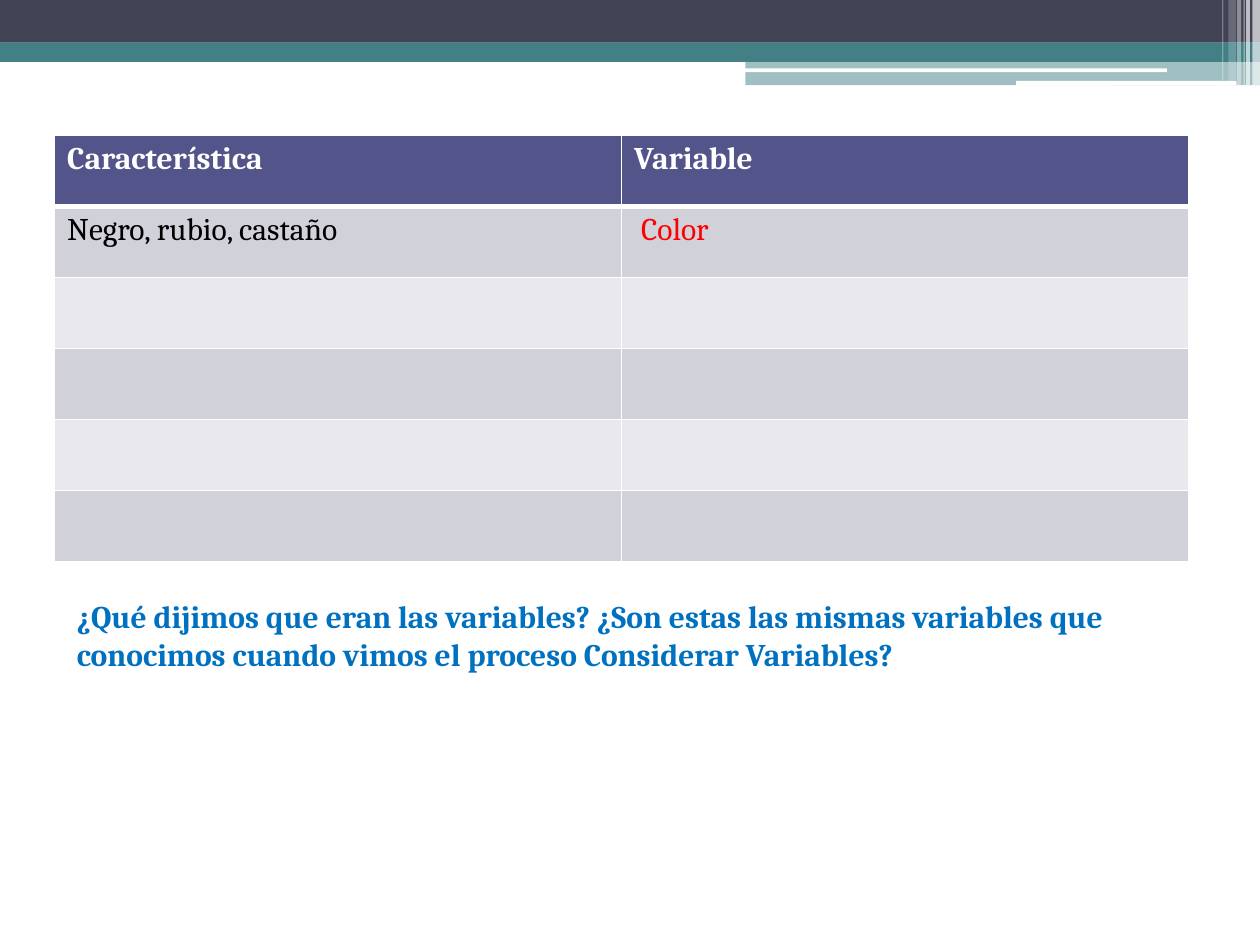
"""Builds a slide with a table of characteristics and variables and a closing question."""
from lxml.etree import SubElement
from pptx import Presentation
from pptx.dml.color import RGBColor
from pptx.enum.shapes import MSO_SHAPE
from pptx.oxml.ns import qn
from pptx.util import Pt

WHITE = RGBColor(0xFF, 0xFF, 0xFF)
BLACK = RGBColor(0, 0, 0)
RED = RGBColor(0xFF, 0, 0)
BLUE = RGBColor(0, 0x70, 0xC0)
SLATE = RGBColor(0x42, 0x44, 0x56)
TEAL = RGBColor(0x43, 0x80, 0x86)
PURPLE = RGBColor(0x53, 0x54, 0x8A)
DARK_BAND = RGBColor(0xD1, 0xD1, 0xDA)
LIGHT_BAND = RGBColor(0xE9, 0xE9, 0xED)
FONT = "Cambria"
FONT_SIZE = 18

BANDS = [
    (0, 28.5, 720, 6.8, TEAL, 50),
    (0, 0, 720, 24.4, SLATE, 100),
    (0, 24.2, 720, 11.2, TEAL, 100),
    (425.9, 28, 294.1, 7.4, TEAL, 100),
    (425.9, 35.2, 294.1, 13.5, TEAL, 50),
]
WHITE_BARS = [(425.6, 39.1, 241.2, 2.2), (580.6, 46.3, 126, 2.6)]
STRIPES = [
    (715.7, 4.3, 48.7, 65),
    (712.1, 2.2, 48.7, 65),
    (710.6, 0.7, 48.7, 60),
    (707, 2.2, 48.7, 40),
    (702, 4.3, 46.1, 20),
    (698.4, 0.7, 46.1, 30),
]

TABLE_LEFT, TABLE_TOP = 31.2, 77.3
COLUMN_WIDTH, ROW_HEIGHT = 324, 40.6
ROWS = [
    ("Característica", "Variable"),
    ("Negro, rubio, castaño", " Color"),
    *[("", "")] * 4,
]
QUESTION = (
    "¿Qué dijimos que eran las variables? ¿Son estas las mismas variables que "
    "conocimos cuando vimos el proceso Considerar Variables?"
)


def add_block(slide, preset, left, top, width, height, color, opacity=100):
    shape = slide.shapes.add_shape(preset, Pt(left), Pt(top), Pt(width), Pt(height))
    shape.shadow.inherit = False
    shape.line.fill.background()
    shape.fill.solid()
    shape.fill.fore_color.rgb = color
    if opacity < 100:
        color_element = shape.fill._xPr.find(qn("a:solidFill"))[0]
        SubElement(color_element, qn("a:alpha"), val=str(opacity * 1000))
    return shape


def add_header(slide):
    for band in BANDS:
        add_block(slide, MSO_SHAPE.RECTANGLE, *band)
    for bar in WHITE_BARS:
        add_block(slide, MSO_SHAPE.ROUNDED_RECTANGLE, *bar, WHITE)
    for left, width, height, opacity in STRIPES:
        add_block(slide, MSO_SHAPE.RECTANGLE, left, 0, width, height, WHITE, opacity)


def format_runs(text_frame, color, bold):
    for paragraph in text_frame.paragraphs:
        for run in paragraph.runs:
            run.font.name = FONT
            run.font.size = Pt(FONT_SIZE)
            run.font.bold = bold
            run.font.color.rgb = color


def set_borders(cell, row):
    widths = {"L": 1, "R": 1, "T": 3 if row == 1 else 1, "B": 3 if row == 0 else 1}
    properties = cell._tc.get_or_add_tcPr()
    for side, width in widths.items():
        line = SubElement(properties, qn(f"a:ln{side}"), w=str(Pt(width)))
        fill = SubElement(line, qn("a:solidFill"))
        SubElement(fill, qn("a:srgbClr"), val=str(WHITE))


def add_variables_table(slide):
    columns = len(ROWS[0])
    table = slide.shapes.add_table(
        len(ROWS), columns, Pt(TABLE_LEFT), Pt(TABLE_TOP),
        Pt(COLUMN_WIDTH * columns), Pt(ROW_HEIGHT * len(ROWS)),
    ).table
    for row, texts in enumerate(ROWS):
        table.rows[row].height = Pt(ROW_HEIGHT)
        band_color = PURPLE if row == 0 else DARK_BAND if row % 2 else LIGHT_BAND
        for column, text in enumerate(texts):
            cell = table.cell(row, column)
            set_borders(cell, row)
            cell.fill.solid()
            cell.fill.fore_color.rgb = band_color
            if text:
                cell.text_frame.text = text
                text_color = WHITE if row == 0 else (BLACK, RED)[column]
                format_runs(cell.text_frame, text_color, row == 0)


def add_question(slide):
    text_box = slide.shapes.add_textbox(Pt(36.8), Pt(337.5), Pt(669), Pt(50.9))
    text_box.text_frame.word_wrap = True
    text_box.text_frame.text = QUESTION
    format_runs(text_box.text_frame, BLUE, True)


def main():
    presentation = Presentation()
    presentation.slide_width, presentation.slide_height = Pt(720), Pt(540)
    slide = presentation.slides.add_slide(presentation.slide_layouts[6])
    add_header(slide)
    add_variables_table(slide)
    add_question(slide)
    presentation.save("out.pptx")


if __name__ == "__main__":
    main()
